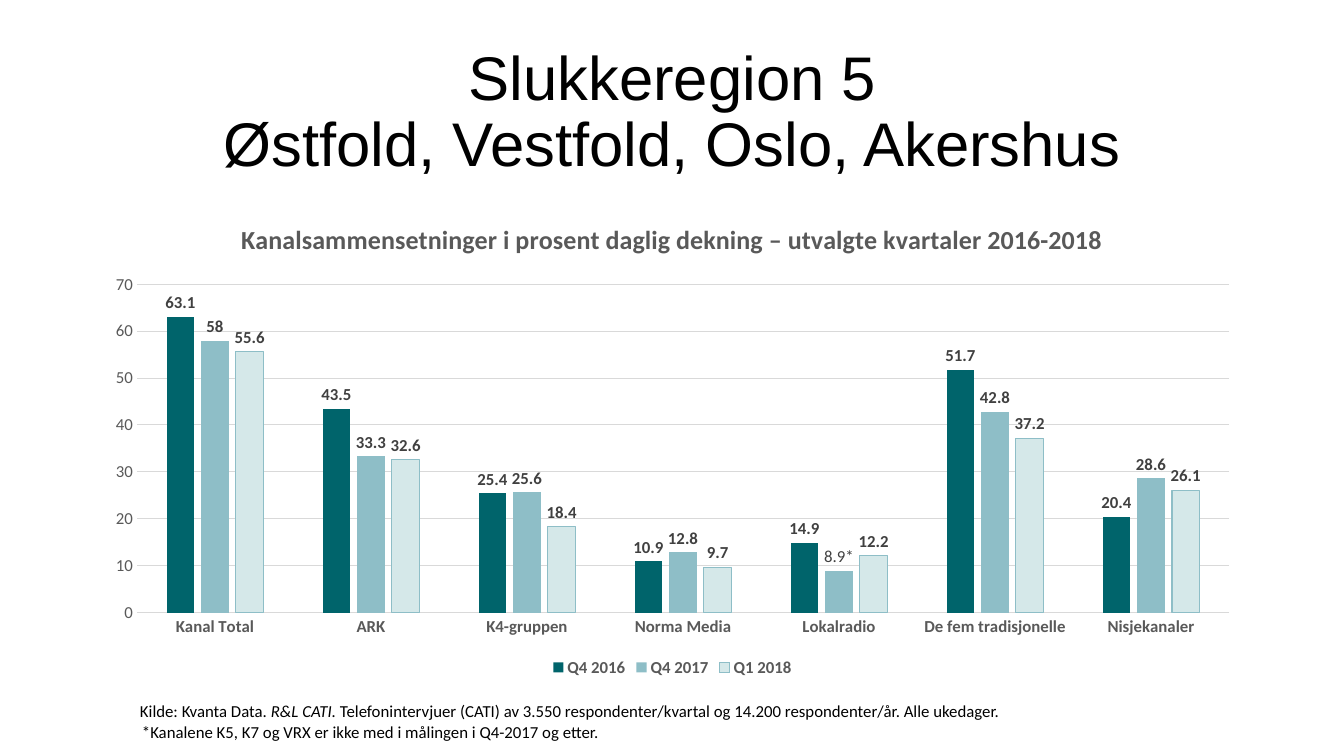
from typing import NamedTuple

from pptx import Presentation
from pptx.chart.data import CategoryChartData
from pptx.dml.color import RGBColor
from pptx.enum import chart as kinds, text
from pptx.util import Inches, Pt

HUES = {
    "black": "000000", "gray": "595959", "dark": "404040", "grid": "D9D9D9",
    "teal": "00646B", "blue": "8EBEC7", "pale": "D5E8E9",
}


class Run(NamedTuple):
    words: str
    italic: bool = False


class Box(NamedTuple):
    left: float
    top: float
    width: float
    height: float
    lines: list[list[Run]]
    font: dict
    frame: dict
    para: dict


class Series(NamedTuple):
    name: str
    vals: list[float]
    fill: str
    edge: str = ""


def hue(name: str) -> RGBColor:
    return RGBColor.from_string(HUES[name])


def apply(item, values: dict) -> None:
    for key, value in values.items():
        setattr(item, key, value)


def style(font, color: str, size: float, bold: bool = False, name: str = "Calibri") -> None:
    apply(font, {"name": name, "size": Pt(size), "bold": bold})
    font.color.rgb = hue(color)


def stroke(line, color: str) -> None:
    line.color.rgb = hue(color)
    line.width = Pt(0.75)


def write(slide, box: Box) -> None:
    shape = slide.shapes.add_textbox(*map(Inches, box[:4]))
    frame = shape.text_frame
    apply(frame, {"word_wrap": True} | box.frame)
    para = frame.paragraphs[0]
    apply(para, box.para)
    for i, line in enumerate(box.lines):
        if i:
            para.add_line_break()
        for part in line:
            run = para.add_run()
            run.text = part.words
            style(run.font, "black", **box.font)
            run.font.italic = part.italic


def plot(slide, cats: list[str], rows: list[Series], title: str):
    data = CategoryChartData()
    data.categories = cats
    for row in rows:
        data.add_series(row.name, row.vals)
    spot = map(Inches, (0.92, 2, 11.5, 4.76))
    chart = slide.shapes.add_chart(
        kinds.XL_CHART_TYPE.COLUMN_CLUSTERED, *spot, data).chart
    style(chart.font, "black", 10)

    # Title and legend
    chart.has_title = True
    head = chart.chart_title
    head.include_in_layout = False
    head.text_frame.text = title
    style(head.text_frame.paragraphs[0].runs[0].font, "gray", 18.6, True)
    chart.has_legend = True
    apply(chart.legend, {"position": kinds.XL_LEGEND_POSITION.BOTTOM,
                         "include_in_layout": False})
    style(chart.legend.font, "gray", 12, True)

    # Axes
    none = kinds.XL_TICK_MARK.NONE
    for axis, bold in ((chart.category_axis, True), (chart.value_axis, False)):
        apply(axis, {"major_tick_mark": none, "minor_tick_mark": none})
        style(axis.tick_labels.font, "gray", 12, bold)
    stroke(chart.category_axis.format.line, "grid")
    scale = chart.value_axis
    apply(scale, {"minimum_scale": 0, "maximum_scale": 70, "major_unit": 10})
    scale.format.line.fill.background()
    stroke(scale.major_gridlines.format.line, "grid")

    # Columns and value labels
    bars = chart.plots[0]
    apply(bars, {"gap_width": 219, "overlap": -27, "vary_by_categories": False})
    for row, part in zip(rows, bars.series):
        part.format.fill.solid()
        part.format.fill.fore_color.rgb = hue(row.fill)
        if row.edge:
            stroke(part.format.line, row.edge)
        else:
            part.format.line.fill.background()
        labels = part.data_labels
        apply(labels, {"show_value": True,
                       "position": kinds.XL_LABEL_POSITION.OUTSIDE_END})
        style(labels.font, "dark", 12, True)
    return chart


def mark(chart, row: int, col: int, words: str) -> None:
    label = chart.plots[0].series[row].points[col].data_label
    label.text_frame.text = words
    style(label.text_frame.paragraphs[0].runs[0].font, "dark", 12)
    label.position = kinds.XL_LABEL_POSITION.OUTSIDE_END


CATS = ["Kanal Total", "ARK", "K4-gruppen", "Norma Media", "Lokalradio",
        "De fem tradisjonelle", "Nisjekanaler"]
ROWS = [
    Series("Q4 2016", [63.1, 43.5, 25.4, 10.9, 14.9, 51.7, 20.4], "teal"),
    Series("Q4 2017", [58, 33.3, 25.6, 12.8, 8.9, 42.8, 28.6], "blue"),
    Series("Q1 2018", [55.6, 32.6, 18.4, 9.7, 12.2, 37.2, 26.1], "pale", "blue"),
]
NOTE = {"font": {"size": 12}, "para": {},
        "frame": {"auto_size": text.MSO_AUTO_SIZE.SHAPE_TO_FIT_TEXT}}
BOXES = [
    Box(0.92, 0.4, 11.5, 1.45,
        [[Run("Slukkeregion 5")], [Run("Østfold, Vestfold, Oslo, Akershus")]],
        font={"size": 44, "name": "Arial"},
        frame={"vertical_anchor": text.MSO_ANCHOR.MIDDLE},
        para={"alignment": text.PP_ALIGN.CENTER, "line_spacing": 0.9}),
    Box(1.29, 6.9, 11.23, 0.3,
        [[Run("Kilde: Kvanta Data. "), Run("R&L CATI. ", True),
          Run("Telefonintervjuer (CATI) av 3.550 respondenter/kvartal og "
              "14.200 respondenter/år. Alle ukedager.")]], **NOTE),
    Box(1.31, 7.11, 11.23, 0.3,
        [[Run("*Kanalene K5, K7 og VRX er ikke med i målingen i "
              "Q4-2017 og etter.")]], **NOTE),
]


def main() -> None:
    deck = Presentation()
    apply(deck, {"slide_width": Inches(13.33), "slide_height": Inches(7.5)})
    slide = deck.slides.add_slide(deck.slide_layouts[6])
    chart = plot(slide, CATS, ROWS, "Kanalsammensetninger i prosent daglig "
                 "dekning – utvalgte kvartaler 2016-2018")
    mark(chart, 1, 4, "8.9*")
    for box in BOXES:
        write(slide, box)
    deck.save("out.pptx")


if __name__ == "__main__":
    main()
